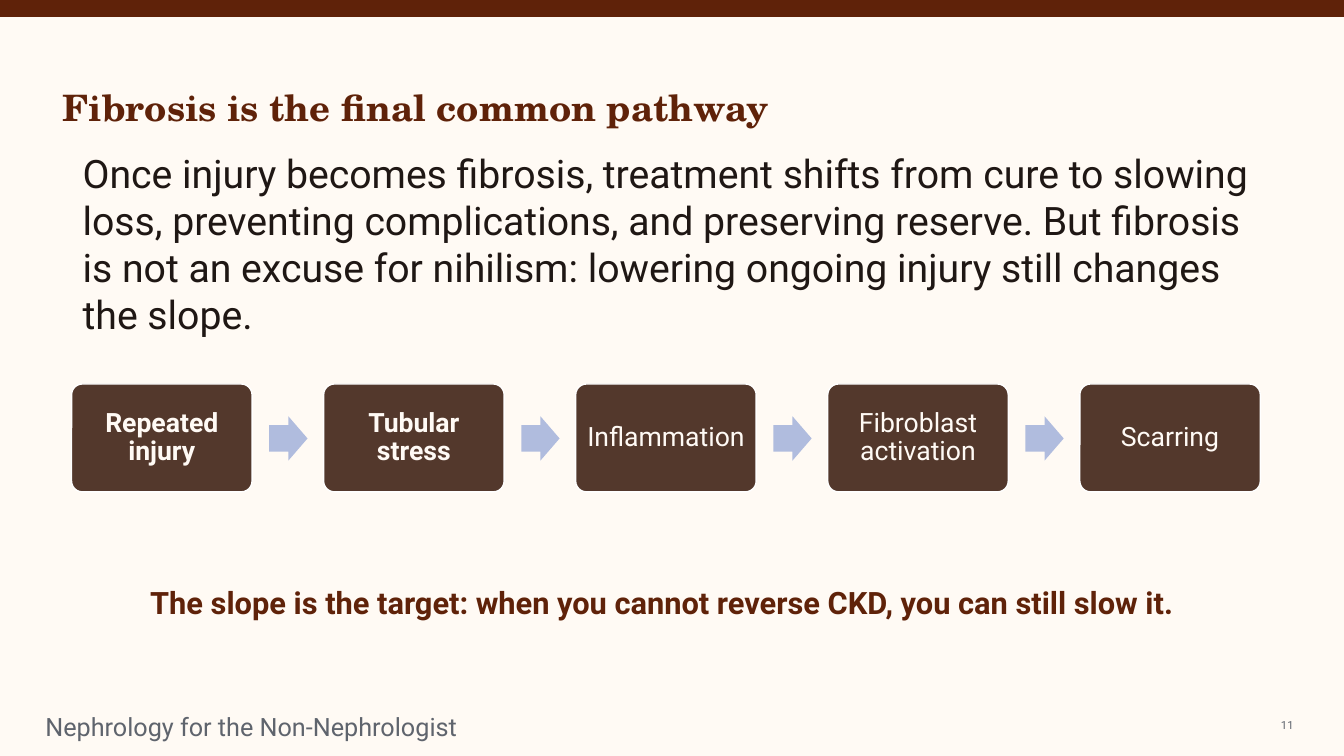
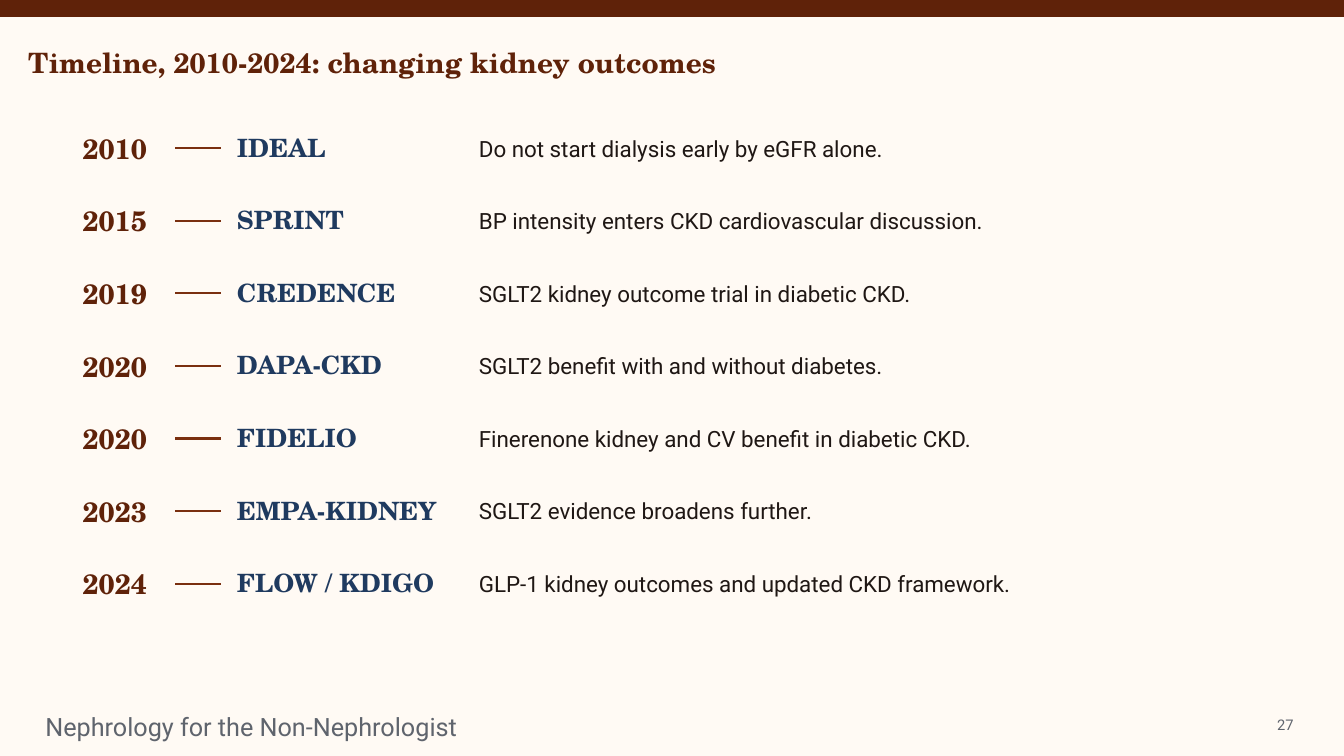
from lxml import etree
from pptx import Presentation
from pptx.dml.color import RGBColor
from pptx.enum.shapes import MSO_CONNECTOR, MSO_SHAPE
from pptx.enum.text import MSO_ANCHOR as Anchor, PP_ALIGN as Align
from pptx.oxml.ns import qn
from pptx.util import Pt

PX = 9144  # 100 px to the inch
WIDTH, HEIGHT = 1333, 750

CREAM = RGBColor(0xFF, 0xFA, 0xF4)
WHITE = RGBColor(0xFF, 0xFF, 0xFF)
MAROON = RGBColor(0x5F, 0x22, 0x09)
RUST = RGBColor(0x7A, 0x2F, 0x0F)
BROWN = RGBColor(0x53, 0x38, 0x2C)
NODE_TEXT = RGBColor(0xFF, 0xFA, 0xF5)
PERIWINKLE = RGBColor(0xB0, 0xBC, 0xDE)
NAVY = RGBColor(0x1F, 0x3A, 0x5F)
INK = RGBColor(0x1F, 0x17, 0x14)
GREY = RGBColor(0x5F, 0x64, 0x6D)

SERIF, SANS = "TeX Gyre Schola", "Roboto"


def style(name, size, color, bold=False):
    return {"name": name, "size": size, "color": color, "bold": bold}


BODY = style(SANS, 28, INK)
TAKEAWAY = style(SANS, 22, MAROON, True)
YEAR = style(SERIF, 20, MAROON, True)
TRIAL = style(SERIF, 18, NAVY, True)
FINDING = style(SANS, 16, INK)
FOOTER = style(SANS, 18, GREY)

FOOTER_TEXT = "Nephrology for the Non-Nephrologist"

PATHWAY = {
    "title": "Fibrosis is the final common pathway",
    "title_at": (62, 75), "title_size": 26,
    "number": "11", "number_size": 8,
}
PATHWAY_BODY = (
    "Once injury becomes fibrosis, treatment shifts from cure to slowing loss, "
    "preventing complications, and preserving reserve. But fibrosis is not an "
    "excuse for nihilism: lowering ongoing injury still changes the slope."
)
PATHWAY_TAKEAWAY = (
    "The slope is the target: when you cannot reverse CKD, you can still slow it."
)
STAGES = [  # label, bold
    ("Repeated injury", True),
    ("Tubular stress", True),
    ("Inflammation", False),
    ("Fibroblast activation", False),
    ("Scarring", False),
]

TIMELINE = {
    "title": "Timeline, 2010-2024: changing kidney outcomes",
    "title_at": (28, 31), "title_size": 20,
    "number": "27", "number_size": 10.5,
}
TRIALS = [
    ("2010", "IDEAL", "Do not start dialysis early by eGFR alone."),
    ("2015", "SPRINT", "BP intensity enters CKD cardiovascular discussion."),
    ("2019", "CREDENCE", "SGLT2 kidney outcome trial in diabetic CKD."),
    ("2020", "DAPA-CKD", "SGLT2 benefit with and without diabetes."),
    ("2020", "FIDELIO", "Finerenone kidney and CV benefit in diabetic CKD."),
    ("2023", "EMPA-KIDNEY", "SGLT2 evidence broadens further."),
    ("2024", "FLOW / KDIGO", "GLP-1 kidney outcomes and updated CKD framework."),
]
TRIAL_COLUMNS = [  # left, width, rise above the row, style
    (82, 80, 0, YEAR),
    (235, 210, 1, TRIAL),
    (475, 720, 0, FINDING),
]


def emu(*lengths):
    return [length * PX for length in lengths]


def write(box, text, look, align=Align.LEFT, anchor=Anchor.MIDDLE,
          inset=0, line_spacing=None):
    frame = box.text_frame
    settings = {"word_wrap": True, "vertical_anchor": anchor}
    for side in ("left", "top", "right", "bottom"):
        settings["margin_" + side] = inset * PX
    for name, value in settings.items():
        setattr(frame, name, value)
    para = frame.paragraphs[0]
    para.alignment = align
    para.line_spacing = line_spacing
    span = para.add_run()
    span.text = text
    for name, value in look.items():
        if name == "color":
            span.font.color.rgb = value
        else:
            setattr(span.font, name, Pt(value) if name == "size" else value)


def add_text(page, at, text, look, **layout):
    write(page.shapes.add_textbox(*emu(*at)), text, look, **layout)


def add_block(page, kind, at, fill, line=None, adjustments=()):
    """Add a filled preset shape, outlined only when a line colour is given."""
    block = page.shapes.add_shape(kind, *emu(*at))
    block.shadow.inherit = False
    block.fill.solid()
    block.fill.fore_color.rgb = fill
    if line is None:
        block.line.fill.background()
    else:
        block.line.color.rgb = line
        block.line.width = Pt(1)
    for index, value in enumerate(adjustments):
        block.adjustments[index] = value
    return block


def add_rule(page, left, right, y):
    rule = page.shapes.add_connector(MSO_CONNECTOR.STRAIGHT, *emu(left, y, right, y))
    rule.line.color.rgb = RUST
    rule.line.width = Pt(1.5)
    properties = rule._element.spPr
    etree.SubElement(properties, qn("a:effectLst"))


def add_page(deck, heading):
    """Add a slide with the shared background, band, title and footer."""
    page = deck.slides.add_slide(deck.slide_layouts[6])
    page.background.fill.solid()
    page.background.fill.fore_color.rgb = CREAM
    add_block(page, MSO_SHAPE.RECTANGLE, (0, 0, WIDTH, 16), MAROON, MAROON)
    add_text(page, (*heading["title_at"], 1140, 62), heading["title"],
             style(SERIF, heading["title_size"], MAROON, True))
    add_text(page, (45, 712, 430, 18), FOOTER_TEXT, FOOTER)
    add_text(page, (1228, 710, 55, 18), heading["number"],
             style(SANS, heading["number_size"], GREY), align=Align.RIGHT)
    return page


def add_pathway(deck):
    page = add_page(deck, PATHWAY)
    add_text(page, (82, 148, 1160, 188), PATHWAY_BODY, BODY, anchor=Anchor.TOP)
    add_text(page, (149, 579, 1110, 45), PATHWAY_TAKEAWAY, TAKEAWAY,
             anchor=Anchor.TOP)

    left, top, width, height, step = 71, 381, 179, 107, 250
    arrow_width, arrow_height = 38, 44
    arrow_top = top + (height - arrow_height) // 2 + 1
    for index, (label, bold) in enumerate(STAGES):
        x = left + index * step
        if index:
            arrow_left = x - (step - width + arrow_width) // 2
            add_block(page, MSO_SHAPE.RIGHT_ARROW,
                      (arrow_left, arrow_top, arrow_width, arrow_height),
                      PERIWINKLE, adjustments=(0.6, 0.5))
        stage = add_block(page, MSO_SHAPE.ROUNDED_RECTANGLE,
                          (x, top, width, height), BROWN, WHITE, (0.1,))
        write(stage, label, style(SANS, 19, NODE_TEXT, bold),
              align=Align.CENTER, inset=6, line_spacing=0.9)


def add_timeline(deck):
    page = add_page(deck, TIMELINE)
    top, height, step = 135, 24, 72
    for index, trial in enumerate(TRIALS):
        y = top + index * step
        add_rule(page, 174, 219, y + height // 2)
        for text, (left, width, rise, look) in zip(trial, TRIAL_COLUMNS):
            add_text(page, (left, y - rise, width, height), text, look)


def main():
    deck = Presentation()
    deck.slide_width, deck.slide_height = emu(WIDTH, HEIGHT)
    add_pathway(deck)
    add_timeline(deck)
    deck.save("out.pptx")


if __name__ == "__main__":
    main()
